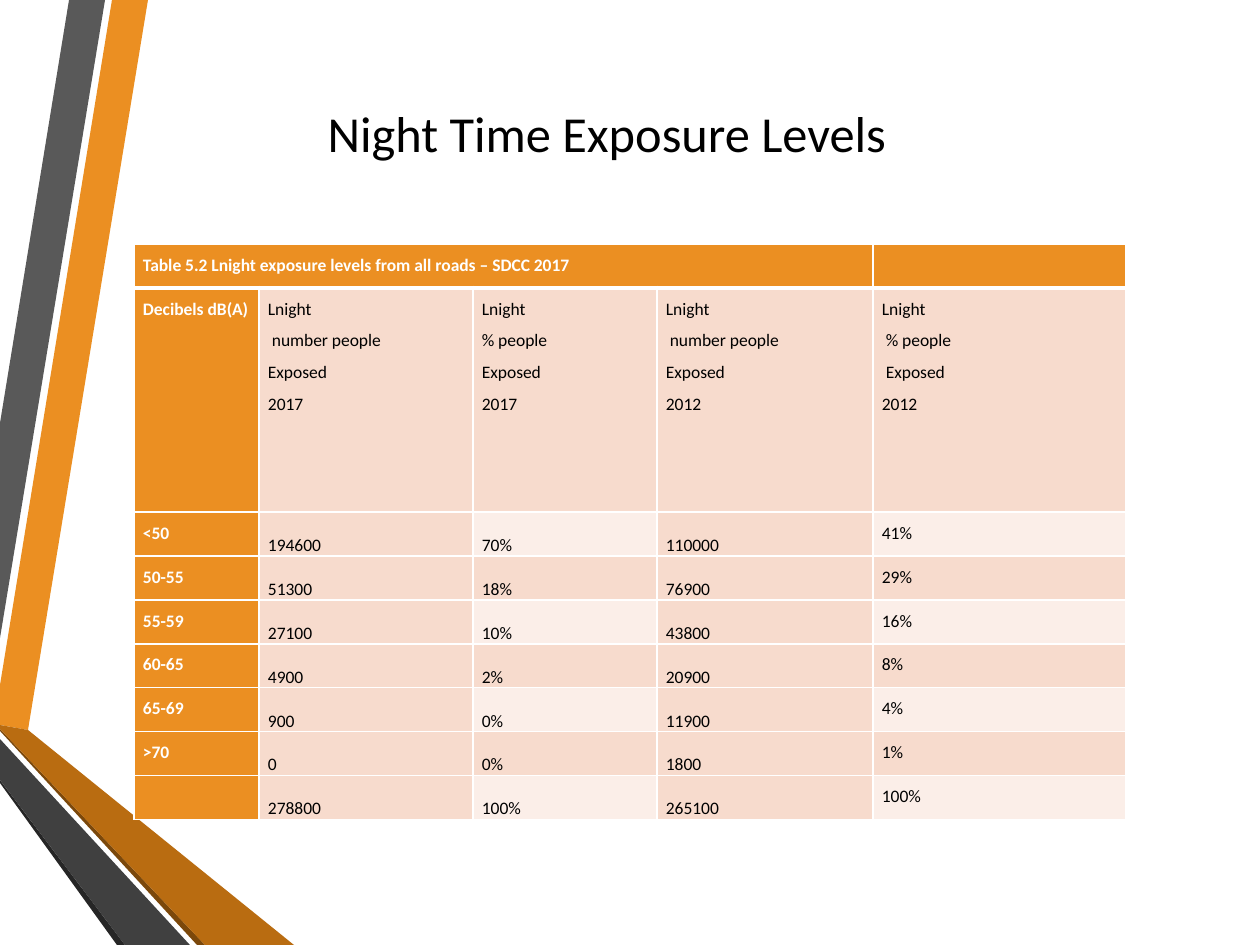
import pptx
import pptx.util
import pptx.dml.color
import pptx.enum.text
import pptx.oxml
import pptx.oxml.ns
from dataclasses import dataclass

TITLE = "Night Time Exposure Levels"
CAPTION = "Table 5.2 Lnight exposure levels from all roads – SDCC 2017"
HEADINGS = [
    "Decibels dB(A)",
    "Lnight\n number people\nExposed\n2017",
    "Lnight\n% people\nExposed\n2017",
    "Lnight\n number people\nExposed\n2012",
    "Lnight\n % people\n Exposed\n2012",
]
LEVELS = [
    ["<50", "194600", "70%", "110000", "41%"],
    ["50-55", "51300", "18%", "76900", "29%"],
    ["55-59", "27100", "10%", "43800", "16%"],
    ["60-65", "4900", "2%", "20900", "8%"],
    ["65-69", "900", "0%", "11900", "4%"],
    [">70", "0", "0%", "1800", "1%"],
    ["", "278800", "100%", "265100", "100%"],
]
RIBBONS = [
    ("EB8F22", [(0, 685), (0, 725), (28, 730), (148, 0), (112, 0)]),
    ("595959", [(105, 0), (69, 0), (0, 423), (0, 638)]),
    ("262626", [(0, 780), (0, 783), (117, 945), (125, 945)]),
    ("7B480B", [(0, 729), (0, 731), (197, 945), (205, 945)]),
    ("B96C11", [(0, 729), (205, 945), (294, 945), (28, 730), (0, 725)]),
    ("404040", [(0, 780), (125, 945), (190, 945), (0, 739)]),
]


@dataclass(frozen=True)
class Theme:
    font: str = "Calibri"
    title_size: float = 28.8
    table_size: float = 10
    ink: str = "000000"
    white: str = "FFFFFF"
    accent: str = "EB8F22"
    band: str = "F7DBCD"
    pale_band: str = "FBEEE8"


THEME = Theme()
SCALE = 914400 / 126
COLUMN_WIDTHS = [125, 214, 184, 216, 253]
ROW_HEIGHT, HEADING_HEIGHT = 44, 224
TABLE_LEFT, TABLE_TOP = 134, 244
CELL_INSET = 9


def px(length):
    return pptx.util.Emu(round(length * SCALE))


def rgb(colour):
    return pptx.dml.color.RGBColor.from_string(colour)


def set_font(paragraph, size, colour, bold=False):
    paragraph.font.name = THEME.font
    paragraph.font.size = pptx.util.Pt(size)
    paragraph.font.bold = bold
    paragraph.font.color.rgb = rgb(colour)


def set_borders(cell, top, bottom):
    for side, points in (("L", 1), ("R", 1), ("T", top), ("B", bottom)):
        cell._tc.get_or_add_tcPr().append(pptx.oxml.parse_xml(
            f'<a:ln{side} {pptx.oxml.ns.nsdecls("a")} w="{points * 12700}">'
            f'<a:solidFill><a:srgbClr val="{THEME.white}"/></a:solidFill></a:ln{side}>'))


def cell_fill(row, column):
    if row == 0 or column == 0:
        return THEME.accent
    if row > 1 and row % 2 == 0 and column % 2 == 0:
        return THEME.pale_band
    return THEME.band


def draw_ribbons(slide):
    for colour, points in RIBBONS:
        outline = slide.shapes.build_freeform(*points[0], scale=SCALE)
        outline.add_line_segments(points[1:], close=True)
        ribbon = outline.convert_to_shape()
        ribbon.shadow.inherit = False
        ribbon.fill.solid()
        ribbon.fill.fore_color.rgb = rgb(colour)
        ribbon.line.fill.background()


def place_title(slide):
    title = slide.shapes.title
    slide.shapes.element.append(title.element)
    title.left, title.top, title.width, title.height = map(px, (164, 106, 897, 110))
    frame = title.text_frame
    frame.text = TITLE
    frame.auto_size = pptx.enum.text.MSO_AUTO_SIZE.NONE
    frame.vertical_anchor = pptx.enum.text.MSO_ANCHOR.MIDDLE
    frame.margin_left = frame.margin_top = 0
    frame.margin_right, frame.margin_bottom = px(11), px(58)
    heading = frame.paragraphs[0]
    heading.alignment = pptx.enum.text.PP_ALIGN.CENTER
    set_font(heading, THEME.title_size, THEME.ink)


def fill_cell(cell, text, row, column):
    header = row == 0 or column == 0
    cell.margin_left = cell.margin_right = px(CELL_INSET)
    cell.margin_top = cell.margin_bottom = 0
    set_borders(cell, 3 if row == 1 else 1, 3 if row == 0 else 1)
    cell.fill.solid()
    cell.fill.fore_color.rgb = rgb(cell_fill(row, column))
    if row > 1 and column in (1, 2, 3):
        cell.vertical_anchor = pptx.enum.text.MSO_ANCHOR.BOTTOM
    if not text:
        return
    cell.text_frame.text = text
    for paragraph in cell.text_frame.paragraphs:
        paragraph.alignment = pptx.enum.text.PP_ALIGN.JUSTIFY
        paragraph.line_spacing = 1.5
        set_font(paragraph, THEME.table_size, THEME.white if header else THEME.ink, header)


def place_table(slide):
    content = [[CAPTION, "", "", "", ""], HEADINGS, *LEVELS]
    heights = [ROW_HEIGHT, HEADING_HEIGHT] + [ROW_HEIGHT] * len(LEVELS)
    table = slide.shapes.add_table(
        len(heights), len(COLUMN_WIDTHS), px(TABLE_LEFT), px(TABLE_TOP),
        px(sum(COLUMN_WIDTHS)), px(sum(heights))).table
    for column, width in zip(table.columns, COLUMN_WIDTHS):
        column.width = px(width)
    for row, height in zip(table.rows, heights):
        row.height = px(height)
    table.cell(0, 0).merge(table.cell(0, 3))
    for row, texts in enumerate(content):
        for column, text in enumerate(texts):
            fill_cell(table.cell(row, column), text, row, column)


def main():
    deck = pptx.Presentation()
    deck.slide_width, deck.slide_height = px(1260), px(945)
    slide = deck.slides.add_slide(deck.slide_layouts[5])
    draw_ribbons(slide)
    place_title(slide)
    place_table(slide)
    deck.save("out.pptx")


if __name__ == "__main__":
    main()
